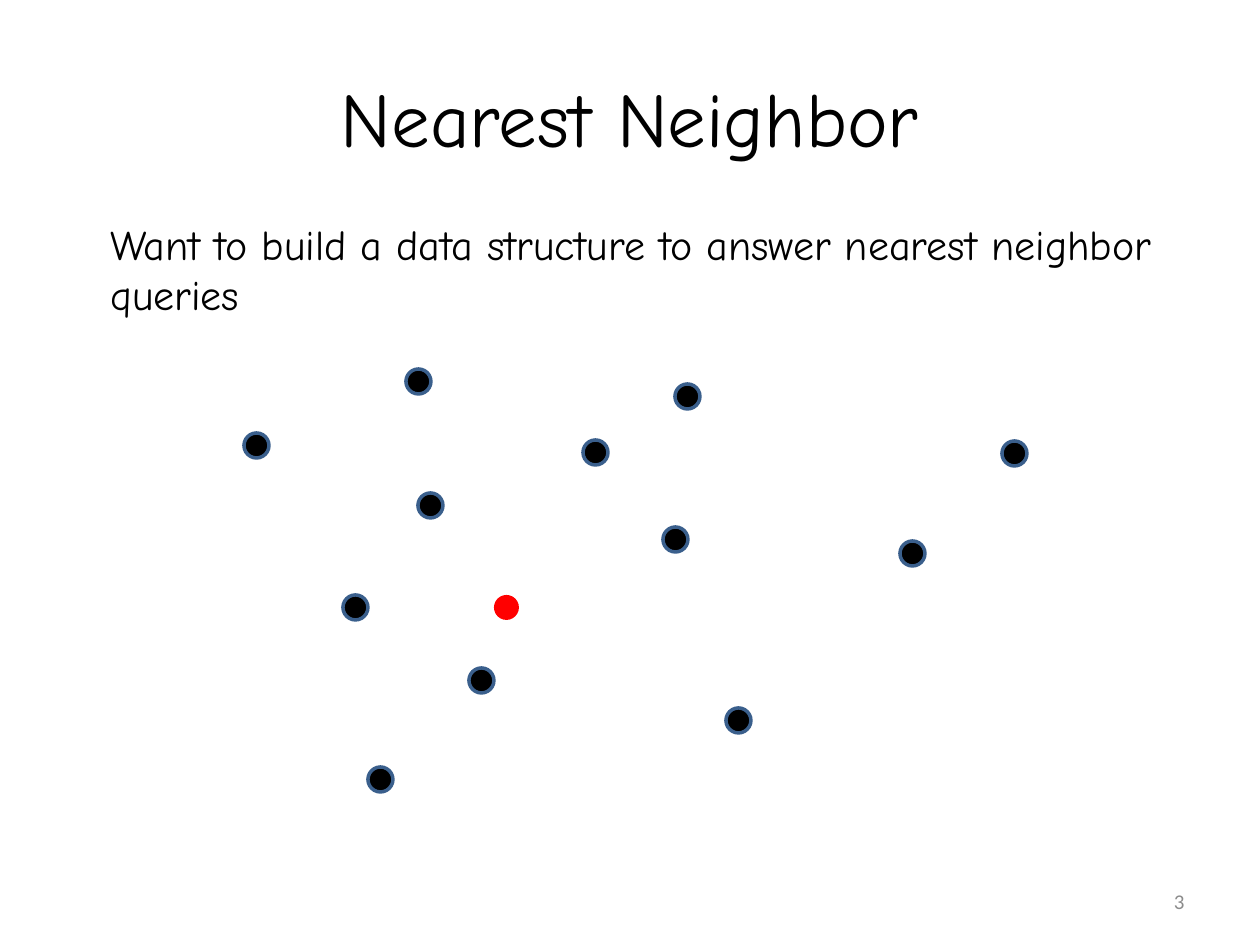
import pptx
import pptx.util
from pptx.dml.color import RGBColor
from pptx.enum.shapes import MSO_SHAPE
from pptx.enum.text import MSO_ANCHOR, PP_ALIGN

PIXELS_PER_INCH = 126
BLACK = RGBColor(0x00, 0x00, 0x00)
RED = RGBColor(0xFF, 0x00, 0x00)
BLUE = RGBColor(0x3A, 0x5F, 0x8C)
GRAY = RGBColor(0x8C, 0x8C, 0x8C)
HEADING_FONT = "Comic Neue"
NUMBER_FONT = "Calibri"

DOT_SIZE = 25
DATA_POINTS = [
    (406, 369), (418, 493), (583, 440), (663, 527), (1002, 441), (469, 668),
    (244, 433), (343, 595), (675, 384), (726, 708), (900, 541), (368, 767),
]
QUERY_POINT = (494, 595)


def px(length):
    return pptx.util.Emu(round(length * 914400 / PIXELS_PER_INCH))


def set_text(shape, text, font_name, size, color, alignment, anchor):
    frame = shape.text_frame
    frame.word_wrap = True
    frame.vertical_anchor = anchor
    frame.text = text
    paragraph = frame.paragraphs[0]
    paragraph.alignment = alignment
    paragraph.font.name = font_name
    paragraph.font.size = pptx.util.Pt(size)
    paragraph.font.color.rgb = color


def add_title(slide, text):
    title = slide.shapes.title
    title.left, title.top, title.width, title.height = map(px, (63, 38, 1134, 158))
    set_text(title, text, HEADING_FONT, 44, BLACK, PP_ALIGN.CENTER, MSO_ANCHOR.MIDDLE)


def add_text(slide, box, *text_settings):
    shape = slide.shapes.add_textbox(*map(px, box))
    set_text(shape, *text_settings)


def add_dot(shapes, position, fill_color, line_color=None):
    left, top = position
    dot = shapes.add_shape(
        MSO_SHAPE.OVAL, px(left), px(top), px(DOT_SIZE), px(DOT_SIZE))
    dot.shadow.inherit = False
    dot.fill.solid()
    dot.fill.fore_color.rgb = fill_color
    if line_color is None:
        dot.line.fill.background()
    else:
        dot.line.color.rgb = line_color
        dot.line.width = pptx.util.Pt(2)


def main():
    presentation = pptx.Presentation()
    presentation.slide_width = px(1260)
    presentation.slide_height = px(945)
    slide = presentation.slides.add_slide(presentation.slide_layouts[5])

    add_title(slide, "Nearest Neighbor")
    add_text(slide, (98, 212, 1150, 115),
             "Want to build a data structure to answer nearest neighbor queries",
             HEADING_FONT, 24, BLACK, PP_ALIGN.LEFT, MSO_ANCHOR.TOP)

    data_group = slide.shapes.add_group_shape()
    for position in DATA_POINTS:
        add_dot(data_group.shapes, position, BLACK, BLUE)
    add_dot(slide.shapes, QUERY_POINT, RED)

    add_text(slide, (903, 876, 294, 50),
             "3", NUMBER_FONT, 12, GRAY, PP_ALIGN.RIGHT, MSO_ANCHOR.MIDDLE)
    presentation.save("out.pptx")


if __name__ == "__main__":
    main()
